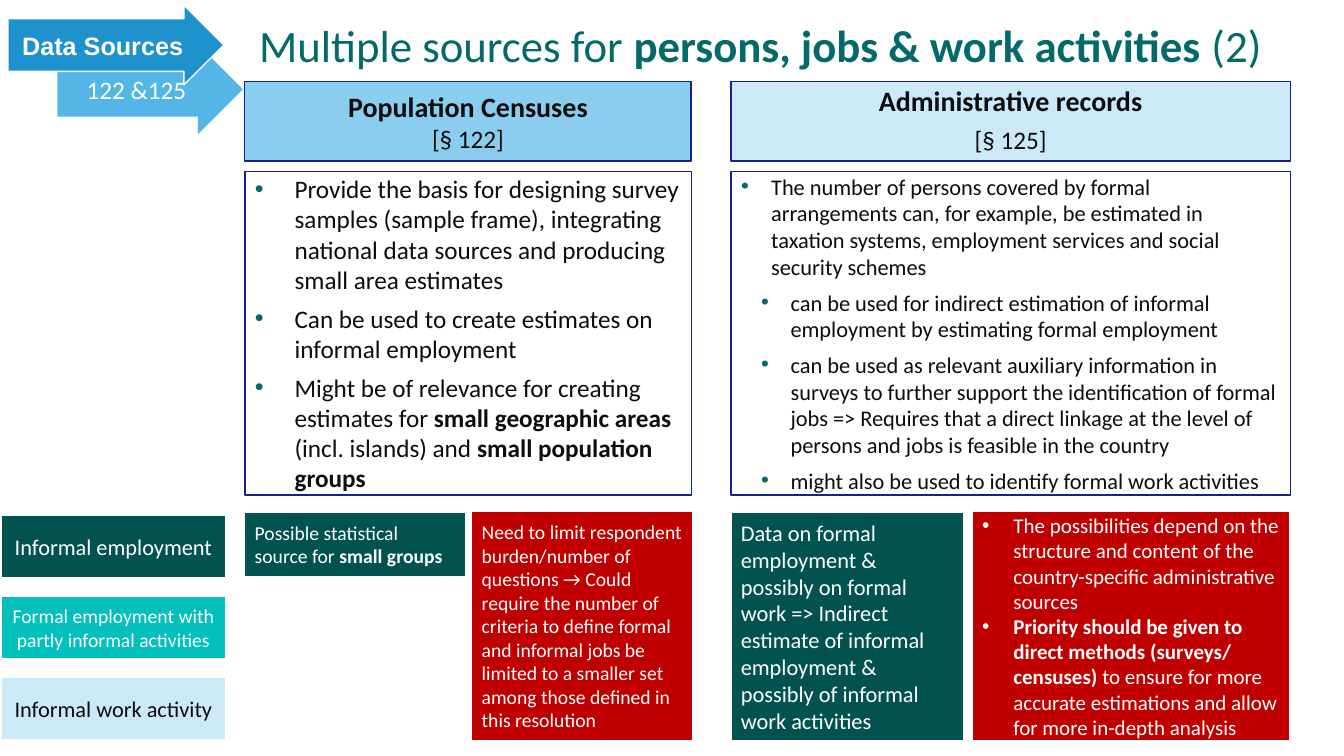
from lxml.etree import SubElement
from pptx import Presentation
from pptx.dml.color import RGBColor
from pptx.enum.shapes import MSO_SHAPE as Shape
from pptx.enum.text import MSO_ANCHOR as Anchor, MSO_AUTO_SIZE as AutoSize, PP_ALIGN as Align
from pptx.oxml.ns import qn
from pptx.util import Cm, Pt

COLOURS = {
    "ink": "0D0D0D", "white": "FFFFFF", "title": "036969", "navy": "16218D",
    "sky": "8ACDEE", "pale": "CCE9F8", "green": "025250", "teal": "04C0BC",
    "red": "C00000", "arrow": "1D92CD", "arrow_light": "53B6E7",
}
HEADER_TOP, HEADER_HEIGHT = 2.06, 2.0
LIST_TOP, LIST_HEIGHT = 4.32, 8.15
NOTE_TOP, NOTE_HEIGHT = 12.88, 5.79


def rgb(name):
    return RGBColor.from_string(COLOURS[name])


def paint(shape, fill, line):
    shape.fill.solid()
    shape.fill.fore_color.rgb = rgb(fill)
    if line:
        shape.line.color.rgb = rgb(line)
        shape.line.width = Pt(1)
    else:
        shape.line.fill.background()


def add_bullet(para, colour, indent, hanging):
    properties = para._p.get_or_add_pPr()
    properties.set("marL", str(Cm(indent)))
    properties.set("indent", str(-Cm(hanging)))
    tint = SubElement(properties, qn("a:buClr"))
    SubElement(tint, qn("a:srgbClr"), val=COLOURS[colour])
    SubElement(properties, qn("a:buFont"), typeface="Arial")
    SubElement(properties, qn("a:buChar"), char="•")


def add_runs(para, text, size, colour, font="Calibri"):
    """Text between double asterisks is bold."""
    for number, part in enumerate(text.split("**")):
        if part:
            run = para.add_run()
            run.text = part
            run.font.name = font
            run.font.size = Pt(size)
            run.font.bold = number % 2 == 1
            run.font.color.rgb = rgb(colour)


def paragraphs(frame, count):
    frame.word_wrap = True
    frame.auto_size = AutoSize.NONE
    frame.vertical_anchor = Anchor.MIDDLE
    return [frame.paragraphs[0]] + [frame.add_paragraph() for _ in range(count - 1)]


def place(shape, box):
    shape.left, shape.top, shape.width, shape.height = map(Cm, box)


def add_block(page, box, text, size, fill, line="white", colour="white",
              align=Align.LEFT, kind=Shape.RECTANGLE, font="Calibri"):
    shape = page.shapes.add_shape(kind, *map(Cm, box))
    shape.shadow.inherit = False
    paint(shape, fill, line)
    para = paragraphs(shape.text_frame, 1)[0]
    para.alignment = align
    add_runs(para, text, size, colour, font)
    return shape


def add_title(page, box):
    title = page.shapes.title
    place(title, box)
    frame = title.text_frame
    para = paragraphs(frame, 1)[0]
    frame.vertical_anchor = Anchor.TOP
    frame.margin_left = frame.margin_right = frame.margin_top = frame.margin_bottom = 0
    para.alignment = Align.LEFT
    para.line_spacing = 0.9
    add_runs(para, "Multiple sources for **persons, jobs & work activities **(2)", 32, "title")


def add_header(page, left, width, name, section, fill, spacing, after):
    box = (left, HEADER_TOP, width, HEADER_HEIGHT)
    shape = add_block(page, box, f"**{name}**", 20, fill, "navy", "ink", Align.CENTER)
    frame = shape.text_frame
    add_runs(frame.add_paragraph(), section, 18, "ink")
    for para in frame.paragraphs:
        para.alignment = Align.CENTER
        para.line_spacing = spacing
        para.space_after = Pt(after)


def add_list(holder, left, width, items, size, before, after, indents):
    """Fill a body placeholder with (level, text) items."""
    place(holder, (left, LIST_TOP, width, LIST_HEIGHT))
    paint(holder, "white", "navy")
    paras = paragraphs(holder.text_frame, len(items))
    for number, (para, (level, text)) in enumerate(zip(paras, items)):
        para.level = level
        add_bullet(para, "title", *indents[level])
        para.space_before = Pt(before if number else 0)
        para.space_after = Pt(after)
        add_runs(para, text, size, "ink")


def add_census_column(page, left, width):
    add_header(page, left, width, "Population Censuses", "[§ 122]", "sky", 1.0, 0)
    add_list(page.placeholders[1], left, width, [
        (0, "Provide the basis for designing survey samples (sample frame), integrating "
            "national data sources and producing small area estimates"),
        (0, "Can be used to create estimates on informal employment"),
        (0, "Might be of relevance for creating estimates for **small geographic areas "
            "**(incl. islands) and **small population groups**"),
    ], 18, 0, 6, [(1.0, 1.0)])
    note_width = 5.56
    add_block(page, (left, NOTE_TOP + 0.02, note_width, 1.63),
              "Possible statistical source for **small groups**", 14, "green")
    add_block(page, (left + width - note_width + 0.03, NOTE_TOP, note_width, NOTE_HEIGHT),
              "Need to limit respondent burden/number of questions → Could require the "
              "number of criteria to define formal and informal jobs be limited to a "
              "smaller set among those defined in this resolution", 14, "red")


def add_records_column(page, left, width):
    add_header(page, left, width, "Administrative records", "[§ 125]", "pale", 0.9, 7)
    add_list(page.placeholders[2], left, width, [
        (0, "The number of persons covered by formal arrangements can, for example, be "
            "estimated in taxation systems, employment services and social security schemes"),
        (1, "can be used for indirect estimation of informal employment by estimating "
            "formal employment"),
        (1, "can be used as relevant auxiliary information in surveys to further support "
            "the identification of formal jobs => Requires that a direct linkage at the "
            "level of persons and jobs is feasible in the country"),
        (1, "might also be used to identify formal work activities"),
    ], 16, 6, 0, [(0.76, 0.76), (1.25, 0.74)])
    add_block(page, (left, NOTE_TOP + 0.02, 5.87, NOTE_HEIGHT - 0.02),
              "Data on formal employment & possibly on formal work => Indirect estimate "
              "of informal employment & possibly of informal work activities", 16, "green")
    # Limits of the records, as two bullets
    limits = add_block(page, (left + width - 8.02, NOTE_TOP, 8.0, NOTE_HEIGHT),
                       "The possibilities depend on the structure and content of the "
                       "country-specific administrative sources", 15, "red")
    advice = limits.text_frame.add_paragraph()
    add_runs(advice, "**Priority should be given to direct methods (surveys/ censuses) **"
             "to ensure for more accurate estimations and allow for more in-depth analysis",
             15, "white")
    for para in limits.text_frame.paragraphs:
        para.alignment = Align.LEFT
        add_bullet(para, "white", 0.79, 0.79)


def add_legend(page, left, top, width):
    entries = [
        ("Informal employment", 16, "green", "white"),
        ("Formal employment with partly informal activities", 14, "teal", "white"),
        ("Informal work activity", 16, "pale", "ink"),
    ]
    for row, (text, size, fill, colour) in enumerate(entries):
        add_block(page, (left, top + row * 2.05, width, 1.57), text, size, fill,
                  colour=colour, align=Align.CENTER)


def add_arrows(page, left, top):
    section = add_block(page, (left + 1.25, top + 0.99, 4.67, 2.26), "122 &125", 18,
                        "arrow_light", None, align=Align.CENTER, kind=Shape.RIGHT_ARROW)
    section.adjustments[0] = 0.61
    topic = add_block(page, (left, top, 5.44, 2.01), "**Data Sources**", 18, "arrow",
                      align=Align.CENTER, kind=Shape.RIGHT_ARROW, font="Arial")
    topic.adjustments[0] = 0.66


def main():
    deck = Presentation()
    deck.slide_width, deck.slide_height = Cm(33.87), Cm(19.05)
    page = deck.slides.add_slide(deck.slide_layouts.get_by_name("Two Content"))
    add_title(page, (6.53, 0.61, 26.62, 2.01))
    add_census_column(page, 6.17, 11.25)
    add_records_column(page, 18.42, 14.1)
    add_legend(page, 0.03, 12.98, 5.66)
    add_arrows(page, 0.2, 0.13)
    deck.save("out.pptx")


if __name__ == "__main__":
    main()
